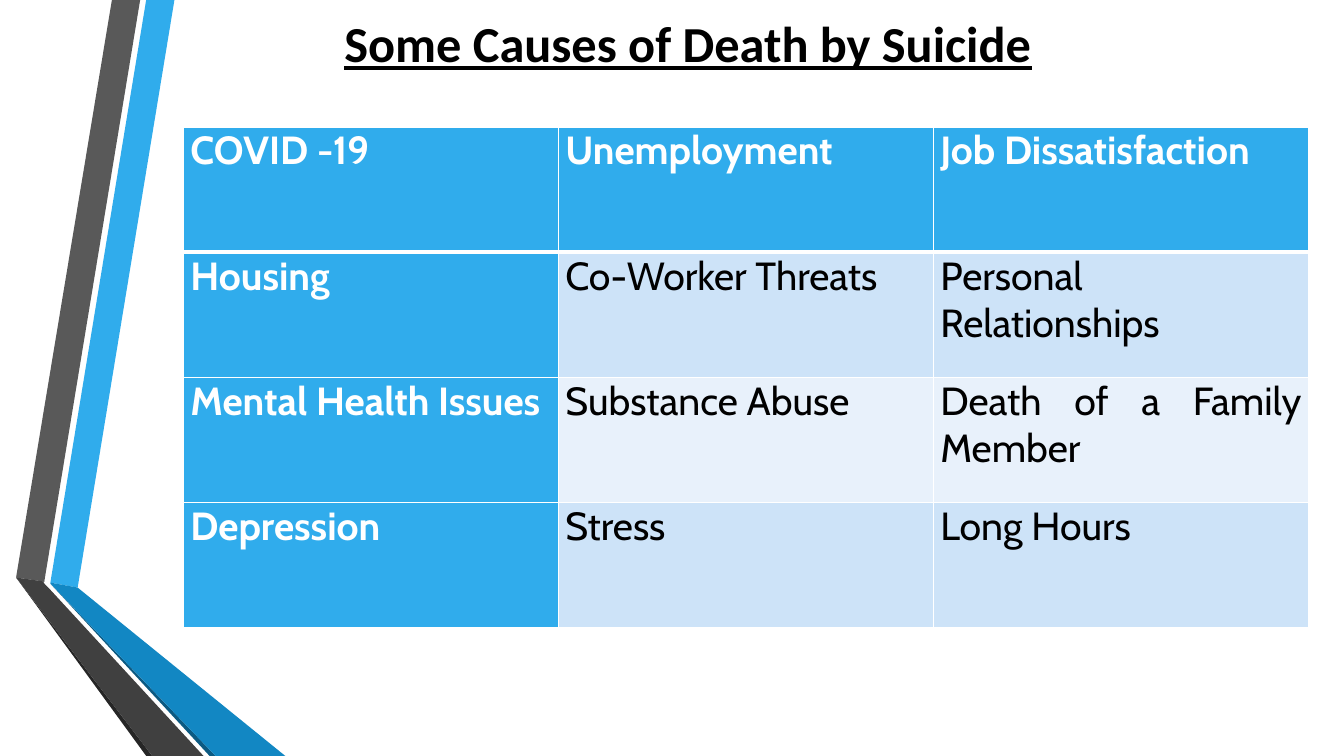
from dataclasses import dataclass

from lxml.etree import SubElement
from pptx import Presentation
from pptx.dml.color import RGBColor
from pptx.enum.text import MSO_ANCHOR, PP_ALIGN
from pptx.oxml.ns import qn
from pptx.slide import Slide
from pptx.table import _Cell
from pptx.text.text import TextFrame
from pptx.util import Emu, Inches, Pt

SLIDE_WIDTH, SLIDE_HEIGHT = Inches(13.333), Inches(7.5)


@dataclass(frozen=True)
class Theme:
    white: str = "FFFFFF"
    black: str = "000000"
    blue: str = "30ACEC"
    deep_blue: str = "1287C3"
    navy: str = "0C5A82"
    gray: str = "595959"
    dark_gray: str = "404040"
    charcoal: str = "262626"
    bands: tuple[str, str] = ("CDE3F8", "E8F1FB")
    title_font: str = "Calibri"
    table_font: str = "Cabin"
    title_size: int = 36
    table_size: int = 28
    thin_border: int = 1
    header_border: int = 3


@dataclass(frozen=True)
class Ribbon:
    """A filled outline; points are percentages of slide width and height."""
    color: str
    points: tuple[tuple[float, float], ...]


THEME = Theme()

RIBBONS = (
    Ribbon(THEME.blue, ((3.75, 77.07), (5.78, 77.73), (12.98, 0), (10.88, 0))),
    Ribbon(THEME.gray, ((10.43, 0), (8.33, 0), (1.2, 76.4), (3.3, 76.93))),
    Ribbon(THEME.charcoal, ((1.2, 76.4), (10.88, 100), (11.33, 100))),
    Ribbon(THEME.navy, ((3.75, 77.2), (15.6, 100), (16.05, 100))),
    Ribbon(THEME.deep_blue, ((3.75, 77.07), (3.75, 77.2), (16.05, 100), (21.23, 100), (5.78, 77.73))),
    Ribbon(THEME.dark_gray, ((1.2, 76.4), (11.33, 100), (15.15, 100), (3.6, 77.73), (3.23, 77.07), (3.3, 76.93))),
)

CAUSES = (
    ("COVID -19", "Unemployment", "Job Dissatisfaction"),
    ("Housing", "Co-Worker Threats", "Personal Relationships"),
    ("Mental Health Issues", "Substance Abuse", "Death of a Family Member"),
    ("Depression", "Stress", "Long Hours"),
)
TABLE_LEFT, TABLE_TOP = 13.65, 16.8
COLUMN_WIDTH, ROW_HEIGHT = 27.9, 16.57


def across(percent: float) -> Emu:
    return Emu(round(SLIDE_WIDTH * percent / 100))


def down(percent: float) -> Emu:
    return Emu(round(SLIDE_HEIGHT * percent / 100))


def write_text(frame: TextFrame, text: str, *, font: str, size: int, color: str,
               align: PP_ALIGN, bold: bool = False, underline: bool = False) -> None:
    paragraph = frame.paragraphs[0]
    paragraph.alignment = align
    run = paragraph.add_run()
    run.text = text
    run.font.name = font
    run.font.size = Pt(size)
    run.font.bold = bold
    run.font.underline = underline
    run.font.color.rgb = RGBColor.from_string(color)


def draw_ribbon(slide: Slide, ribbon: Ribbon) -> None:
    start, *others = [(across(x), down(y)) for x, y in ribbon.points]
    builder = slide.shapes.build_freeform(*start)
    builder.add_line_segments(others, close=True)
    shape = builder.convert_to_shape()
    shape.shadow.inherit = False
    shape.fill.solid()
    shape.fill.fore_color.rgb = RGBColor.from_string(ribbon.color)
    shape.line.fill.background()


def set_borders(cell: _Cell, widths: dict[str, int]) -> None:
    """Add white borders; call before filling, as borders precede the fill."""
    properties = cell._tc.get_or_add_tcPr()
    for side, width in widths.items():
        line = SubElement(properties, qn(f"a:{side}"), w=str(Pt(width)))
        fill = SubElement(line, qn("a:solidFill"))
        SubElement(fill, qn("a:srgbClr"), val=THEME.white)


def draw_cell(cell: _Cell, text: str, row: int, column: int) -> None:
    heading = row == 0 or column == 0
    widths = dict.fromkeys(("lnL", "lnR", "lnT", "lnB"), THEME.thin_border)
    if row == 0:
        widths["lnB"] = THEME.header_border
    elif row == 1:
        widths["lnT"] = THEME.header_border
    set_borders(cell, widths)
    cell.fill.solid()
    color = THEME.blue if heading else THEME.bands[(row - 1) % 2]
    cell.fill.fore_color.rgb = RGBColor.from_string(color)
    cell.margin_left = cell.margin_right = Inches(0.07)
    cell.margin_top = cell.margin_bottom = 0
    write_text(cell.text_frame, text, font=THEME.table_font, size=THEME.table_size,
               color=THEME.white if heading else THEME.black,
               align=PP_ALIGN.JUSTIFY, bold=heading)


def draw_causes(slide: Slide) -> None:
    row_count, column_count = len(CAUSES), len(CAUSES[0])
    table = slide.shapes.add_table(
        row_count, column_count, across(TABLE_LEFT), down(TABLE_TOP),
        across(COLUMN_WIDTH * column_count), down(ROW_HEIGHT * row_count)).table
    for row, texts in enumerate(CAUSES):
        for column, text in enumerate(texts):
            draw_cell(table.cell(row, column), text, row, column)


def draw_title(slide: Slide) -> None:
    box = slide.shapes.add_textbox(across(13.65), down(0.93), across(75.08), down(9.47))
    frame = box.text_frame
    frame.word_wrap = True
    frame.vertical_anchor = MSO_ANCHOR.MIDDLE
    write_text(frame, "Some Causes of Death by Suicide", font=THEME.title_font,
               size=THEME.title_size, color=THEME.black, align=PP_ALIGN.CENTER,
               bold=True, underline=True)


def main() -> None:
    presentation = Presentation()
    presentation.slide_width, presentation.slide_height = SLIDE_WIDTH, SLIDE_HEIGHT
    slide = presentation.slides.add_slide(presentation.slide_layouts[6])
    for ribbon in RIBBONS:
        draw_ribbon(slide, ribbon)
    draw_causes(slide)
    draw_title(slide)
    presentation.save("out.pptx")


if __name__ == "__main__":
    main()
